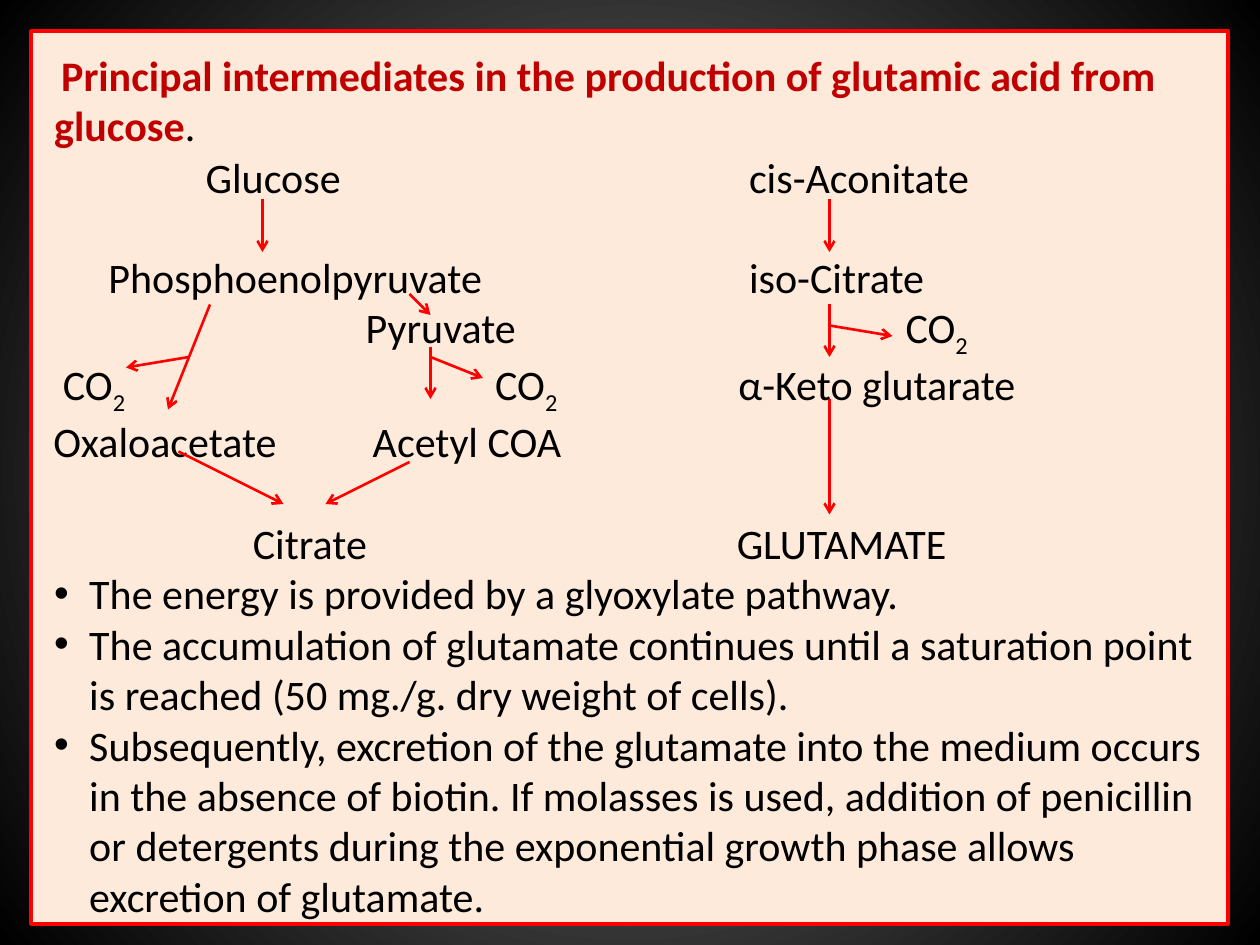
"""Build a slide on the intermediates between glucose and glutamic acid."""
from dataclasses import dataclass

from lxml import etree
from pptx import Presentation
from pptx.dml.color import RGBColor
from pptx.enum.shapes import MSO_CONNECTOR, MSO_SHAPE
from pptx.oxml.ns import qn
from pptx.util import Pt

RECTANGLE = MSO_SHAPE.RECTANGLE
STRAIGHT = MSO_CONNECTOR.STRAIGHT
RED = RGBColor(0xFF, 0x00, 0x00)
DARK_RED = RGBColor(0xC0, 0x00, 0x00)
CREAM = RGBColor(0xFD, 0xEA, 0xDA)
GREY = RGBColor(0x7F, 0x7F, 0x7F)
BLACK = RGBColor(0x00, 0x00, 0x00)
FONT_NAME = "Calibri"
FONT_SIZE = 24
TEXT_LEFT, TEXT_WIDTH = 31, 657
ROW_HEIGHT = 29.3


@dataclass(frozen=True)
class Metabolite:
    left: float
    top: float
    width: float
    name: str
    subscript: str = ""


@dataclass(frozen=True)
class Reaction:
    x1: float
    y1: float
    x2: float
    y2: float


METABOLITES = [
    Metabolite(117.5, 86.5, 90, "Glucose"),
    Metabolite(428, 86.5, 140, "cis-Aconitate"),
    Metabolite(62, 143.5, 225, "Phosphoenolpyruvate"),
    Metabolite(428, 143.5, 120, "iso-Citrate"),
    Metabolite(209, 172.5, 100, "Pyruvate"),
    Metabolite(517.5, 172.5, 50, "CO", "2"),
    Metabolite(36, 205, 50, "CO", "2"),
    Metabolite(283, 205, 50, "CO", "2"),
    Metabolite(422, 205, 175, "α-Keto glutarate"),
    Metabolite(30.5, 237.5, 140, "Oxaloacetate"),
    Metabolite(213, 237.5, 120, "Acetyl COA"),
    Metabolite(144.5, 295.5, 80, "Citrate"),
    Metabolite(421, 295.5, 135, "GLUTAMATE"),
]

REACTIONS = [
    Reaction(150, 114, 150, 144),
    Reaction(120, 174, 96, 234),
    Reaction(474, 174, 474, 204),
    Reaction(234, 168, 246, 180),
    Reaction(246, 198, 246, 228),
    Reaction(102, 258, 162, 288),
    Reaction(234, 264, 186, 288),
    Reaction(474, 114, 474, 144),
    Reaction(474, 228, 474, 294),
    Reaction(246, 204, 276, 216),
    Reaction(108, 204, 72, 210),
    Reaction(474, 186, 510, 192),
]

FINDINGS = [
    "The energy is provided by a glyoxylate pathway.",
    "The accumulation of glutamate continues until a saturation point "
    "is reached (50 mg./g. dry weight of cells).",
    "Subsequently, excretion of the glutamate into the medium occurs "
    "in the absence of biotin. If molasses is used, addition of penicillin "
    "or detergents during the exponential growth phase allows "
    "excretion of glutamate.",
]


def paint_background(slide) -> None:
    fill = slide.background.fill
    fill.gradient()
    for stop, color in zip(fill.gradient_stops, (GREY, BLACK)):
        stop.color.rgb = color
    gradient = slide.element.find(".//" + qn("a:gradFill"))
    gradient.remove(gradient.find(qn("a:lin")))
    circle = etree.SubElement(gradient, qn("a:path"), path="circle")
    etree.SubElement(circle, qn("a:fillToRect"),
                     l="50000", t="50000", r="50000", b="50000")


def add_panel(slide) -> None:
    panel = slide.shapes.add_shape(RECTANGLE, Pt(18), Pt(18), Pt(684), Pt(510))
    panel.shadow.inherit = False
    panel.fill.solid()
    panel.fill.fore_color.rgb = CREAM
    panel.line.color.rgb = RED
    panel.line.width = Pt(2.25)


def add_text_frame(slide, left: float, top: float, width: float, height: float):
    box = slide.shapes.add_textbox(Pt(left), Pt(top), Pt(width), Pt(height))
    frame = box.text_frame
    frame.word_wrap = True
    frame.margin_left = frame.margin_right = Pt(0)
    frame.margin_top = frame.margin_bottom = Pt(0)
    return frame


def add_run(paragraph, text: str, color: RGBColor = BLACK, bold: bool = False):
    run = paragraph.add_run()
    run.text = text
    run.font.name = FONT_NAME
    run.font.size = Pt(FONT_SIZE)
    run.font.color.rgb = color
    run.font.bold = bold
    return run


def add_title(slide) -> None:
    frame = add_text_frame(slide, TEXT_LEFT, 28, TEXT_WIDTH, 2 * ROW_HEIGHT)
    paragraph = frame.paragraphs[0]
    paragraph._p.get_or_add_pPr().set("indent", str(Pt(4)))
    add_run(paragraph, "Principal intermediates in the production of "
            "glutamic acid from glucose", DARK_RED, True)
    add_run(paragraph, ".")


def add_metabolite(slide, item: Metabolite) -> None:
    frame = add_text_frame(slide, item.left, item.top, item.width, ROW_HEIGHT)
    paragraph = frame.paragraphs[0]
    add_run(paragraph, item.name)
    if item.subscript:
        digit = add_run(paragraph, item.subscript)
        digit._r.get_or_add_rPr().set("baseline", "-25000")


def add_reaction(slide, step: Reaction) -> None:
    arrow = slide.shapes.add_connector(
        STRAIGHT, Pt(step.x1), Pt(step.y1), Pt(step.x2), Pt(step.y2))
    arrow.line.color.rgb = RED
    arrow.line.width = Pt(1.5)
    properties = arrow.element.spPr
    etree.SubElement(properties.find(qn("a:ln")), qn("a:tailEnd"), type="arrow")
    etree.SubElement(properties, qn("a:effectLst"))


def add_findings(slide) -> None:
    frame = add_text_frame(slide, TEXT_LEFT, 324.5, TEXT_WIDTH, 7 * ROW_HEIGHT)
    for index, finding in enumerate(FINDINGS):
        paragraph = frame.add_paragraph() if index else frame.paragraphs[0]
        add_run(paragraph, finding)
        properties = paragraph._p.get_or_add_pPr()
        properties.set("marL", str(Pt(20)))
        properties.set("indent", str(Pt(-20)))
        etree.SubElement(properties, qn("a:buFont"), typeface="Arial")
        etree.SubElement(properties, qn("a:buChar"), char="•")


def main() -> None:
    deck = Presentation()
    deck.slide_width, deck.slide_height = Pt(720), Pt(540)
    slide = deck.slides.add_slide(deck.slide_layouts[6])
    paint_background(slide)
    add_panel(slide)
    add_title(slide)
    for item in METABOLITES:
        add_metabolite(slide, item)
    add_findings(slide)
    for step in REACTIONS:
        add_reaction(slide, step)
    deck.save("out.pptx")


if __name__ == "__main__":
    main()
